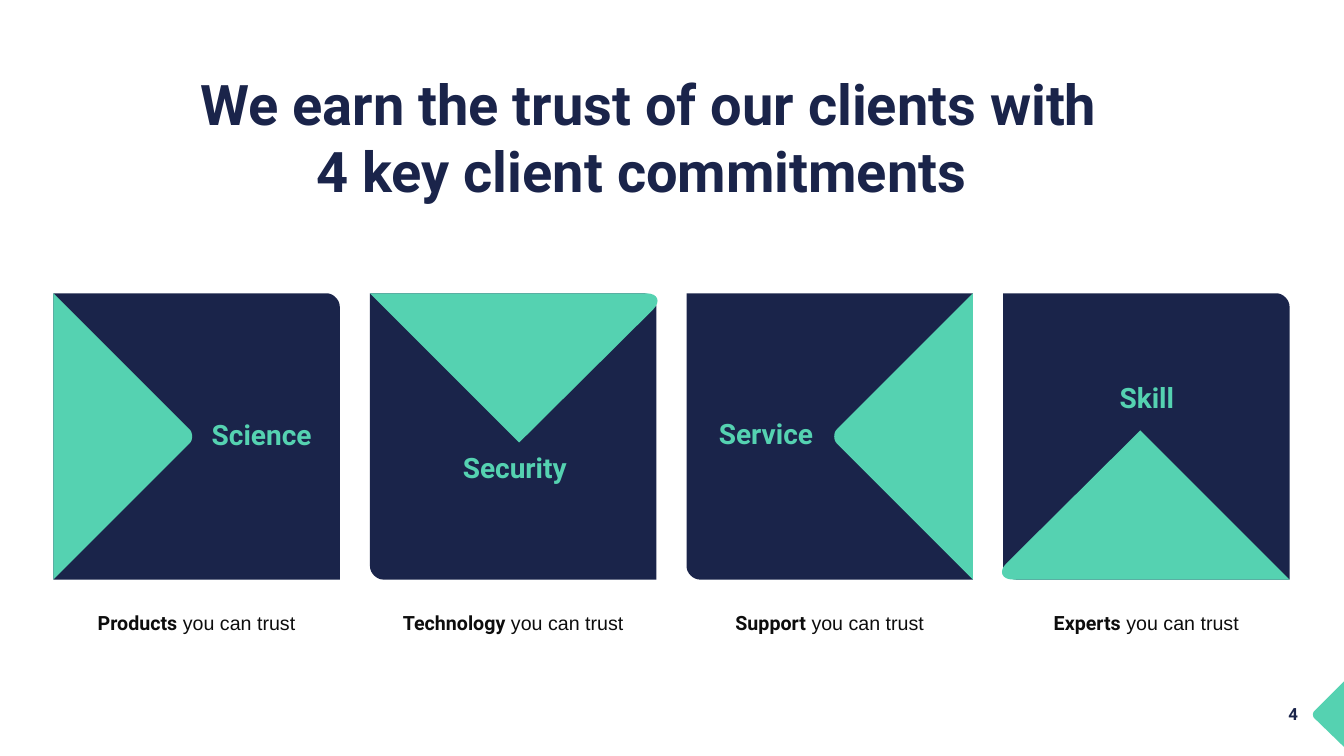
"""Build the slide on the four client commitments."""
from dataclasses import dataclass
from math import hypot

from pptx import Presentation
from pptx.dml.color import RGBColor
from pptx.enum.text import MSO_ANCHOR, MSO_AUTO_SIZE, PP_ALIGN
from pptx.util import Inches, Pt


@dataclass(frozen=True)
class Theme:
    """Colours, fonts and type sizes."""
    navy: str = "1A244A"
    mint: str = "55D2B1"
    ink: str = "0D0D0D"
    heading: str = "Roboto"
    body: str = "Arial"
    title_size: int = 40
    label_size: int = 20
    caption_size: int = 14
    number_size: int = 12


class Deck:
    """Holds the theme and the current slide."""

    def __init__(self, theme):
        """Start a widescreen presentation with one slide."""
        self.theme = theme
        self.presentation = Presentation()
        self.presentation.slide_width = Inches(13.33)
        self.presentation.slide_height = Inches(7.5)
        self.slide = self.presentation.slides.add_slide(
            self.presentation.slide_layouts[5])

    def add_runs(self, box, runs, size, color, align=PP_ALIGN.LEFT):
        """Fill a text shape with (text, is_bold) runs."""
        frame = box.text_frame
        frame.word_wrap = True
        frame.auto_size = MSO_AUTO_SIZE.NONE
        frame.vertical_anchor = MSO_ANCHOR.TOP
        paragraph = frame.paragraphs[0]
        paragraph.alignment = align
        for words, bold in runs:
            run = paragraph.add_run()
            run.text = words
            run.font.name = self.theme.heading if bold else self.theme.body
            run.font.size = Pt(size)
            run.font.bold = bold
            run.font.color.rgb = RGBColor.from_string(color)

    def title(self, words, left, top, width, height):
        """Place and format the title placeholder."""
        heading = self.slide.shapes.title
        heading.left, heading.top = Inches(left), Inches(top)
        heading.width, heading.height = Inches(width), Inches(height)
        self.add_runs(heading, [(words, True)], self.theme.title_size,
                      self.theme.navy, PP_ALIGN.CENTER)

    def text(self, runs, left, top, width, height, size, color,
             align=PP_ALIGN.LEFT, inset=0.1):
        """Add a text box."""
        box = self.slide.shapes.add_textbox(
            Inches(left), Inches(top), Inches(width), Inches(height))
        box.text_frame.margin_left = box.text_frame.margin_right = Inches(inset)
        self.add_runs(box, runs, size, color, align)

    def outline(self, corners, left, top, color):
        """Draw a filled polygon from (x, y, rounding) corners."""
        points = [(Inches(left + x), Inches(top + y))
                  for x, y in rounded(corners)]
        builder = self.slide.shapes.build_freeform(*points[0])
        builder.add_line_segments(points[1:], close=True)
        shape = builder.convert_to_shape()
        shape.shadow.inherit = False
        shape.fill.solid()
        shape.fill.fore_color.rgb = RGBColor.from_string(color)
        shape.line.fill.background()


def toward(start, end, distance):
    """Return the point at a distance from start on the way to end."""
    share = distance / hypot(end[0] - start[0], end[1] - start[1])
    return tuple(a + (b - a) * share for a, b in zip(start[:2], end[:2]))


def rounded(corners, steps=8):
    """Replace each rounded corner by short segments along a Bézier curve."""
    points = []
    for index, corner in enumerate(corners):
        radius = corner[2]
        if not radius:
            points.append(corner[:2])
            continue
        following = corners[(index + 1) % len(corners)]
        ends = [toward(corner, neighbour, distance)
                for distance in (radius, radius / 2)
                for neighbour in (corners[index - 1], following)]
        curve = (ends[0], ends[2], ends[3], ends[1])
        for step in range(steps + 1):
            t = step / steps
            weights = ((1 - t) ** 3, 3 * t * (1 - t) ** 2,
                       3 * t ** 2 * (1 - t), t ** 3)
            points.append(tuple(
                sum(w * p[axis] for w, p in zip(weights, curve))
                for axis in (0, 1)))
    return points


def turned(corners):
    """Rotate an outline half a turn within its panel."""
    return [(SIDE - x, SIDE - y, radius) for x, y, radius in corners]


SIDE = 2.84
PITCH = 3.14
PANEL_LEFT, PANEL_TOP = 0.53, 2.91
CAPTION_TOP = 6.01
ROUND = 0.13

ONE_ROUND = [(0, 0, 0), (SIDE, 0, ROUND), (SIDE, SIDE, 0), (0, SIDE, 0)]
TWO_ROUND = [(0, 0, 0), (SIDE, 0, ROUND), (SIDE, SIDE, 0), (0, SIDE, ROUND)]
SIDE_WEDGE = [(0, 0, 0), (SIDE / 2, SIDE / 2, 0.1), (0, SIDE, 0)]
TOP_WEDGE = [(0, 0, 0), (2.97, 0, 0.23), (1.48, 1.48, 0)]

COMMITMENTS = [
    ("Science", "Products", ONE_ROUND, SIDE_WEDGE, 1.57, 1.18, PP_ALIGN.LEFT),
    ("Security", "Technology", TWO_ROUND, TOP_WEDGE, 0.92, 1.51, PP_ALIGN.LEFT),
    ("Service", "Support", turned(ONE_ROUND), turned(SIDE_WEDGE),
     0.32, 1.17, PP_ALIGN.LEFT),
    ("Skill", "Experts", TWO_ROUND, turned(TOP_WEDGE),
     0.82, 0.82, PP_ALIGN.CENTER),
]
PAGE_MARK = [(0.33, 0, 0), (0, 0.33, 0.05), (0.33, 0.65, 0)]


def main():
    """Compose and save the slide."""
    theme = Theme()
    deck = Deck(theme)
    deck.title("We earn the trust of our clients with 4 key client commitments ",
               1.78, 0.64, 9.3, 1.45)
    for index, commitment in enumerate(COMMITMENTS):
        label, offer, panel, wedge, label_x, label_y, align = commitment
        left = PANEL_LEFT + index * PITCH
        deck.outline(panel, left, PANEL_TOP, theme.navy)
        deck.outline(wedge, left, PANEL_TOP, theme.mint)
        deck.text([(label, True)], left + label_x, PANEL_TOP + label_y,
                  1.21, 0.44, theme.label_size, theme.mint, align, inset=0)
        deck.text([(offer, True), (" you can trust", False)], left, CAPTION_TOP,
                  SIDE, 0.34, theme.caption_size, theme.ink, PP_ALIGN.CENTER)
    deck.outline(PAGE_MARK, 13, 6.76, theme.mint)
    deck.text([("4", True)], 12.68, 6.93, 0.4, 0.3,
              theme.number_size, theme.navy)
    deck.presentation.save("out.pptx")


if __name__ == "__main__":
    main()
